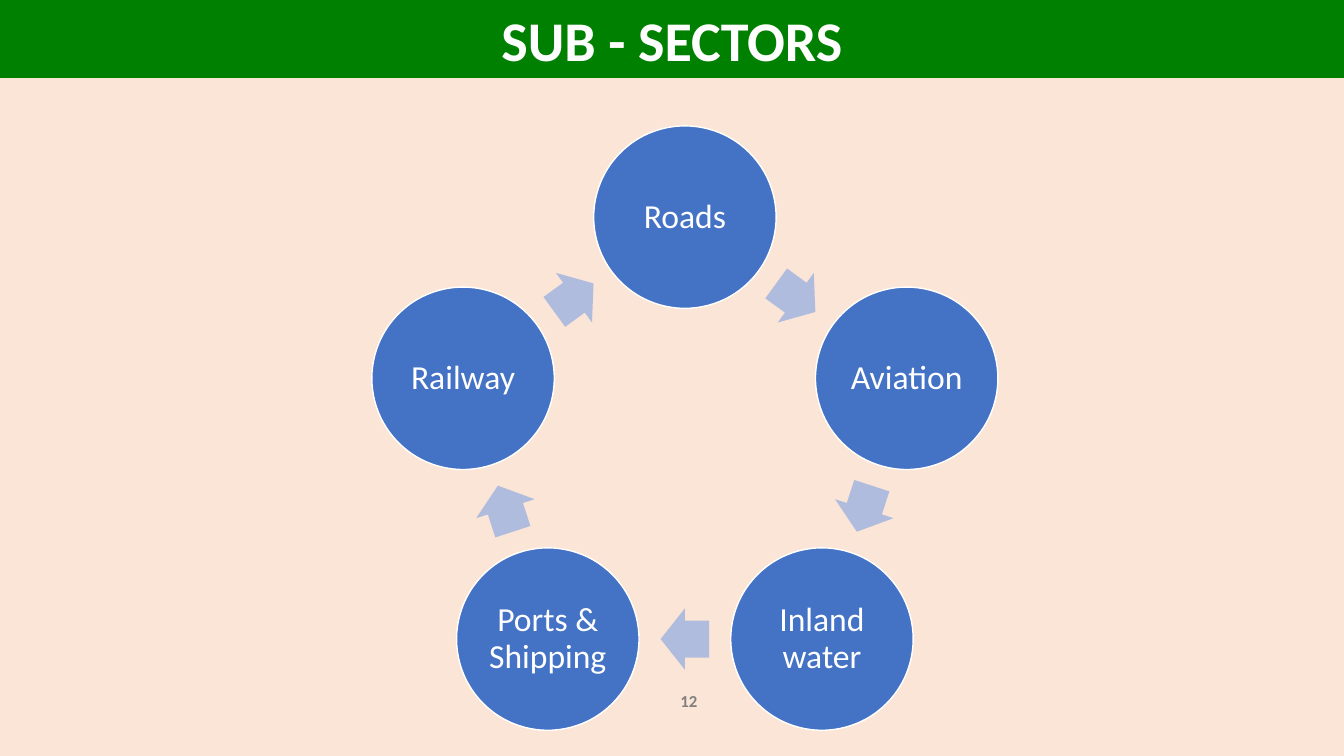
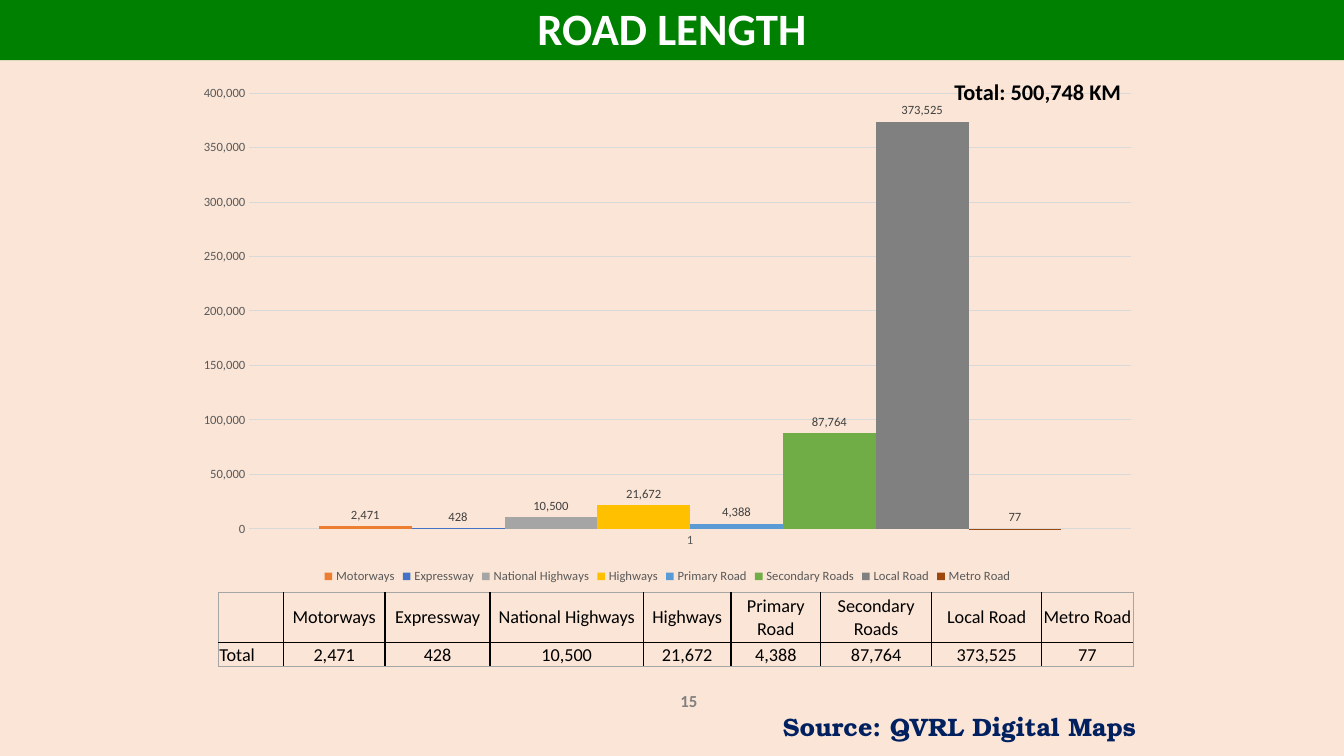
"""Build two slides on transport: a cycle of sub-sectors and a chart of road lengths."""
from dataclasses import dataclass
from math import cos, radians, sin

from lxml import etree
from pptx import Presentation
from pptx.chart.data import CategoryChartData
from pptx.dml.color import RGBColor
from pptx.enum.chart import XL_CHART_TYPE, XL_LABEL_POSITION, XL_LEGEND_POSITION, XL_TICK_MARK
from pptx.enum.shapes import MSO_SHAPE
from pptx.enum.text import MSO_ANCHOR, MSO_AUTO_SIZE, PP_ALIGN
from pptx.oxml.ns import qn
from pptx.util import Pt

LEFT, CENTER = PP_ALIGN.LEFT, PP_ALIGN.CENTER
TOP, MIDDLE, BOTTOM = MSO_ANCHOR.TOP, MSO_ANCHOR.MIDDLE, MSO_ANCHOR.BOTTOM
NO_AUTOFIT = MSO_AUTO_SIZE.NONE
CIRCLE, ARROW = MSO_SHAPE.OVAL, MSO_SHAPE.RIGHT_ARROW
COLUMNS = XL_CHART_TYPE.COLUMN_CLUSTERED
OUTSIDE_END = XL_LABEL_POSITION.OUTSIDE_END
LEGEND_BOTTOM = XL_LEGEND_POSITION.BOTTOM
NO_TICK = XL_TICK_MARK.NONE

SLIDE_WIDTH, SLIDE_HEIGHT = 960, 540
TITLE_ONLY = 5
NUMBER_FORMAT = "#,##0"
COLORS = {
    "background": "FBE5D6", "band": "008000", "white": "FFFFFF", "black": "000000",
    "number": "808080", "circle": "4472C4", "arrow": "B0BCDE", "source": "002060",
    "axis": "595959", "label": "404040", "grid": "D9D9D9", "edge": "A6A6A6",
}


@dataclass(frozen=True)
class Frame:
    """Position and size in points."""
    left: float
    top: float
    width: float
    height: float

    def lengths(self) -> tuple:
        """Return the four lengths for python-pptx."""
        return tuple(Pt(value) for value in (self.left, self.top, self.width, self.height))


@dataclass(frozen=True)
class TextStyle:
    """Font and paragraph alignment of a text."""
    size: float
    color: str
    bold: bool = False
    name: str = "Calibri"
    align: PP_ALIGN = CENTER


@dataclass(frozen=True)
class Road:
    """One class of road, with its table column width."""
    name: str
    length: int
    color: str
    column: float


NUMBER = TextStyle(12, "number", True)
SECTOR = TextStyle(24, "white")
TOTAL = TextStyle(16, "black", True, align=LEFT)
SOURCE = TextStyle(18, "source", True, "TeX Gyre Bonum", LEFT)
CELL = TextStyle(13, "black")
ROW_HEAD = TextStyle(13, "black", align=LEFT)
AXIS = TextStyle(9, "axis")
LABEL = TextStyle(9, "label")

SECTORS = ("Roads", "Aviation", "Inland water", "Ports & Shipping", "Railway")
ROADS = (
    Road("Motorways", 2471, "ED7D31", 72.7),
    Road("Expressway", 428, "4472C4", 75),
    Road("National Highways", 10500, "A5A5A5", 109.5),
    Road("Highways", 21672, "FFC000", 62.7),
    Road("Primary Road", 4388, "5B9BD5", 64),
    Road("Secondary Roads", 87764, "70AD47", 79.3),
    Road("Local Road", 373525, "808080", 78.5),
    Road("Metro Road", 77, "9E480E", 65.5),
)


def set_values(target, **values) -> None:
    """Set each given attribute on the target."""
    for name, value in values.items():
        setattr(target, name, value)


def rgb(name: str) -> RGBColor:
    """Look up a named colour."""
    return RGBColor.from_string(COLORS[name])


def paint(fill, color: RGBColor) -> None:
    """Fill with one solid colour."""
    fill.solid()
    fill.fore_color.rgb = color


def format_font(font, style: TextStyle) -> None:
    """Apply a text style to a font."""
    set_values(font, size=Pt(style.size), bold=style.bold, name=style.name)
    font.color.rgb = rgb(style.color)


def write(text_frame, text: str, style: TextStyle) -> None:
    """Write one styled paragraph into a text frame."""
    para = text_frame.paragraphs[0]
    para.alignment = style.align
    span = para.add_run()
    span.text = text
    format_font(span.font, style)


def add_text(page, frame: Frame, text: str, style: TextStyle,
             anchor: MSO_ANCHOR = TOP, wrap: bool = True) -> None:
    """Add a text box."""
    box = page.shapes.add_textbox(*frame.lengths())
    set_values(box.text_frame, word_wrap=wrap, vertical_anchor=anchor)
    write(box.text_frame, text, style)


def add_page(deck, title: str, band: Frame, title_size: float, number: str):
    """Add a slide with its title band and slide number."""
    page = deck.slides.add_slide(deck.slide_layouts[TITLE_ONLY])
    heading = page.shapes.title
    left, top, width, height = band.lengths()
    set_values(heading, left=left, top=top, width=width, height=height)
    paint(heading.fill, rgb("band"))
    set_values(heading.text_frame, word_wrap=True, vertical_anchor=MIDDLE, auto_size=NO_AUTOFIT)
    write(heading.text_frame, title, TextStyle(title_size, "white", True))
    add_text(page, Frame(420, 486, 144, 28.8), number, NUMBER, MIDDLE)
    return page


def add_centered(page, kind: MSO_SHAPE, x: float, y: float, width: float, height: float, color: str):
    """Add a filled shape around a centre point."""
    frame = Frame(x - width / 2, y - height / 2, width, height)
    shape = page.shapes.add_shape(kind, *frame.lengths())
    shape.shadow.inherit = False
    paint(shape.fill, rgb(color))
    return shape


def add_cycle(page) -> None:
    """Draw the sectors on a ring, with an arrow halfway to each next one."""
    center_x, center_y, radius, diameter = 489.2, 321.7, 166.6, 130.3
    step = 360 / len(SECTORS)
    midway = radius * cos(radians(step / 2))
    for index, sector in enumerate(SECTORS):
        angle = radians(index * step)
        circle = add_centered(page, CIRCLE, center_x + radius * sin(angle),
                              center_y - radius * cos(angle), diameter, diameter, "circle")
        circle.line.color.rgb = rgb("white")
        circle.line.width = Pt(1)
        inset = Pt(2)
        set_values(circle.text_frame, word_wrap=True, vertical_anchor=MIDDLE, margin_left=inset,
                   margin_right=inset, margin_top=inset, margin_bottom=inset)
        write(circle.text_frame, sector, SECTOR)
        circle.text_frame.paragraphs[0].line_spacing = 0.9

        turn = (index + 0.5) * step
        arrow = add_centered(page, ARROW, center_x + midway * sin(radians(turn)),
                             center_y - midway * cos(radians(turn)), 34.6, 43.9, "arrow")
        arrow.line.fill.background()
        arrow.rotation = turn
        arrow.adjustments[0], arrow.adjustments[1] = 0.6, 0.5


def add_road_chart(page) -> None:
    """Add the column chart with one series for each road class."""
    data = CategoryChartData(number_format=NUMBER_FORMAT)
    data.categories = ["1"]
    for road in ROADS:
        data.add_series(road.name, [road.length])
    frame = Frame(131.8, 54, 689.8, 365.8)
    chart = page.shapes.add_chart(COLUMNS, *frame.lengths(), data).chart
    set_values(chart, has_title=False, has_legend=True)
    format_font(chart.font, TextStyle(10, "black"))
    set_values(chart.legend, position=LEGEND_BOTTOM, include_in_layout=False)
    format_font(chart.legend.font, AXIS)

    for axis in (chart.category_axis, chart.value_axis):
        set_values(axis, major_tick_mark=NO_TICK, minor_tick_mark=NO_TICK)
        axis.format.line.fill.background()
        format_font(axis.tick_labels.font, AXIS)
    chart.category_axis.has_major_gridlines = False
    set_values(chart.value_axis, minimum_scale=0, maximum_scale=400000, major_unit=50000)
    set_values(chart.value_axis.tick_labels, number_format=NUMBER_FORMAT, number_format_is_linked=False)
    grid = chart.value_axis.major_gridlines.format.line
    grid.color.rgb = rgb("grid")
    grid.width = Pt(0.75)

    plot = chart.plots[0]
    set_values(plot, gap_width=150, overlap=0, vary_by_categories=False)
    for road, series in zip(ROADS, plot.series):
        paint(series.format.fill, RGBColor.from_string(road.color))
        labels = series.data_labels
        set_values(labels, show_value=True, position=OUTSIDE_END,
                   number_format=NUMBER_FORMAT, number_format_is_linked=False)
        format_font(labels.font, LABEL)


def add_border(cell, side: str, color: str, width: float) -> None:
    """Draw one border of a table cell."""
    line = etree.Element(qn(f"a:{side}"), w=str(Pt(width)))
    fill = etree.SubElement(line, qn("a:solidFill"))
    etree.SubElement(fill, qn("a:srgbClr"), val=COLORS[color])
    return line


def format_cell(cell, outer: dict) -> None:
    """Clear the cell's fill and draw grey outer and black inner borders."""
    inset = Pt(0.72)
    set_values(cell, margin_left=inset, margin_right=inset, margin_top=inset, margin_bottom=0)
    cell.fill.background()
    properties = cell._tc.get_or_add_tcPr()
    for index, (side, is_outer) in enumerate(outer.items()):
        color, width = ("edge", 0.5) if is_outer else ("black", 1)
        properties.insert(index, add_border(cell, side, color, width))


def add_road_table(page) -> None:
    """Add the table of road lengths."""
    rows = (("", *(road.name for road in ROADS)),
            ("Total", *(f"{road.length:,}" for road in ROADS)))
    widths = (46.4, *(road.column for road in ROADS))
    heights = (35.7, 17.6)
    frame = Frame(156, 423, sum(widths), sum(heights))
    table = page.shapes.add_table(len(rows), len(widths), *frame.lengths()).table
    set_values(table, first_row=False, horz_banding=False)
    for column, width in zip(table.columns, widths):
        column.width = Pt(width)
    for row_index, (texts, height) in enumerate(zip(rows, heights)):
        table.rows[row_index].height = Pt(height)
        for column_index, text in enumerate(texts):
            cell = table.cell(row_index, column_index)
            is_head = column_index == 0
            cell.vertical_anchor = BOTTOM if is_head else MIDDLE
            format_cell(cell, {"lnL": is_head, "lnR": column_index == len(widths) - 1,
                               "lnT": row_index == 0, "lnB": row_index == len(rows) - 1})
            if text:
                write(cell.text_frame, text, ROW_HEAD if is_head else CELL)


def main() -> None:
    """Build and save the deck."""
    deck = Presentation()
    set_values(deck, slide_width=Pt(SLIDE_WIDTH), slide_height=Pt(SLIDE_HEIGHT))
    paint(deck.slide_master.background.fill, rgb("background"))

    page = add_page(deck, "SUB - SECTORS", Frame(0, 0, SLIDE_WIDTH, 55.7), 40, "12")
    add_cycle(page)

    page = add_page(deck, "ROAD LENGTH", Frame(0, -3, SLIDE_WIDTH, 46), 32, "15")
    add_text(page, Frame(552.2, 504.7, 269.3, 28.8), "Source: QVRL Digital Maps", SOURCE, wrap=False)
    add_road_table(page)
    add_road_chart(page)
    add_text(page, Frame(674.6, 52.6, 153.4, 30.2), "Total: 500,748 KM", TOTAL)

    deck.save("out.pptx")


if __name__ == "__main__":
    main()
